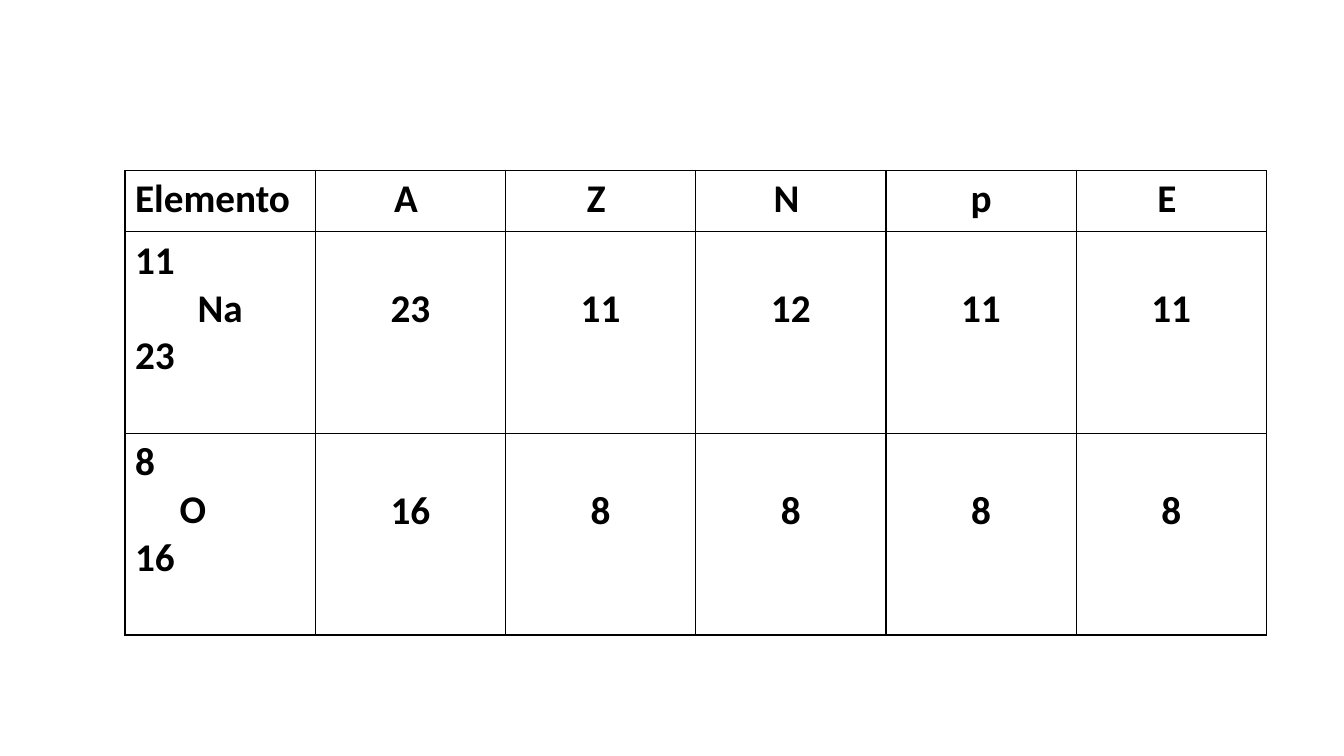
from lxml import etree
from pptx import Presentation
from pptx.dml.color import RGBColor
from pptx.enum.text import PP_ALIGN
from pptx.oxml.ns import qn
from pptx.util import Inches, Pt

CENTER, LEFT = PP_ALIGN.CENTER, PP_ALIGN.LEFT

# Content
HEADERS = ["Elemento", "A ", "Z ", "N ", "p", "E "]
# atomic number, symbol, mass number, symbol indent (inches), values of A, Z, N, p, E
ELEMENTS = [
    ("11", "Na", "23", 0.62, ["23", "11", "12", "11", "11"]),
    ("8", "O", "16", 0.44, ["16", "8", "8", "8", "8"]),
]

# Layout and style
COLORS = {"text": "000000", "border": "000000"}
FONT, SIZE = "Calibri", Pt(28)
LEFT_EDGE, TOP_EDGE, TABLE_WIDTH = 1.24, 1.69, 11.32
HEADER_HEIGHT, ELEMENT_HEIGHT = 0.61, 2.0
CELL_MARGIN, LINE_HEIGHT = 0.05, 0.48


def add_borders(cell):
    properties = cell._tc.get_or_add_tcPr()
    for position, side in enumerate(("a:lnL", "a:lnR", "a:lnT", "a:lnB")):
        line = etree.Element(qn(side), w=str(Pt(1)))
        fill = etree.SubElement(line, qn("a:solidFill"))
        etree.SubElement(fill, qn("a:srgbClr"), val=COLORS["border"])
        properties.insert(position, line)


def fill_cell(cell, lines, align, top=CELL_MARGIN):
    cell.fill.background()
    cell.margin_top = Inches(top)
    cell.text = "\n".join(lines)
    for paragraph in cell.text_frame.paragraphs:
        paragraph.alignment = align
        font = paragraph.font
        font.name, font.size, font.bold = FONT, SIZE, True
        font.color.rgb = RGBColor.from_string(COLORS["text"])
    add_borders(cell)


prs = Presentation()
prs.slide_width, prs.slide_height = Inches(13.33), Inches(7.5)
slide = prs.slides.add_slide(prs.slide_layouts[6])

# Table grid
row_heights = [HEADER_HEIGHT] + [ELEMENT_HEIGHT] * len(ELEMENTS)
table = slide.shapes.add_table(
    len(row_heights), len(HEADERS), Inches(LEFT_EDGE), Inches(TOP_EDGE),
    Inches(TABLE_WIDTH), Inches(sum(row_heights))).table
table.horz_banding = False
for column in table.columns:
    column.width = Inches(TABLE_WIDTH / len(HEADERS))
for row, height in zip(table.rows, row_heights):
    row.height = Inches(height)

# Header row
for col, header in enumerate(HEADERS):
    fill_cell(table.cell(0, col), [header], CENTER if col else LEFT)

# Element rows, with the values level with the symbol
for row, (atomic, symbol, mass, indent, values) in enumerate(ELEMENTS, start=1):
    element = table.cell(row, 0)
    fill_cell(element, [atomic, symbol, mass], LEFT)
    symbol_line = element.text_frame.paragraphs[1]
    symbol_line._p.get_or_add_pPr().set("marL", str(Inches(indent)))
    for col, value in enumerate(values, start=1):
        fill_cell(table.cell(row, col), [value], CENTER, CELL_MARGIN + LINE_HEIGHT)

prs.save("out.pptx")
